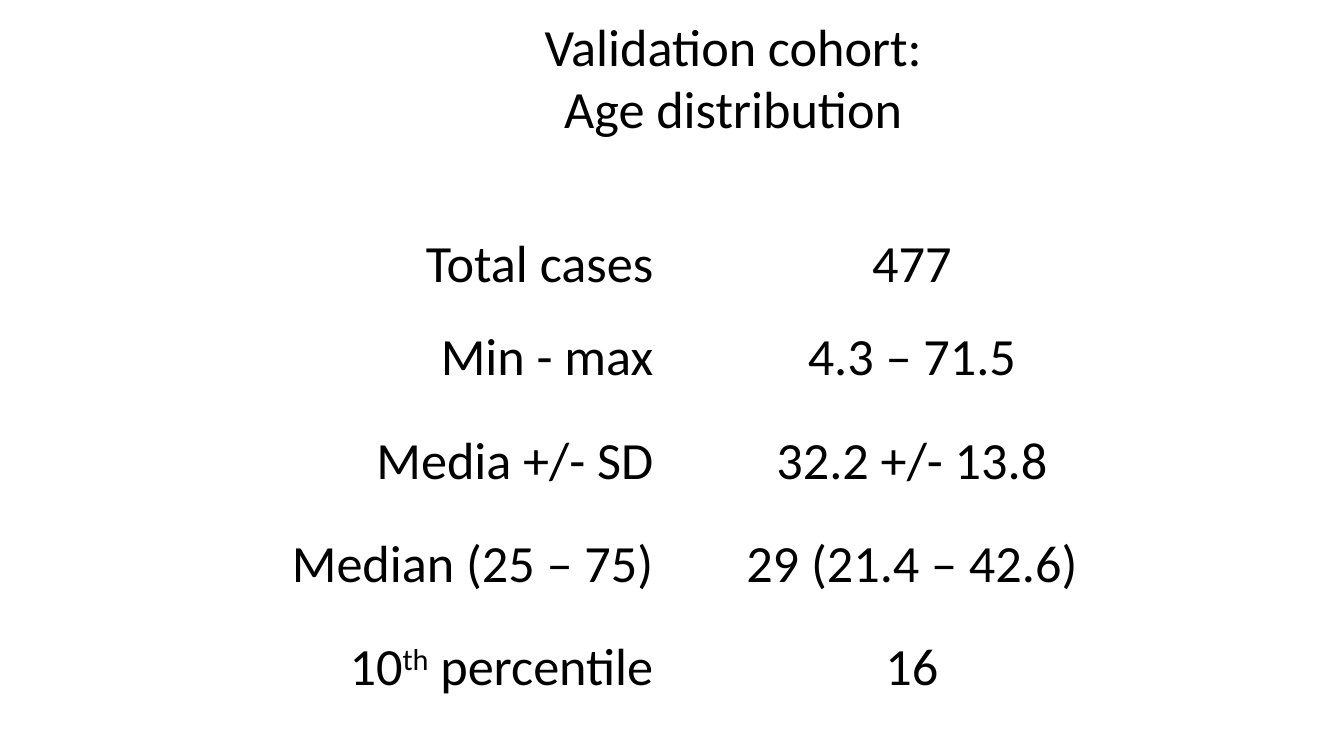
"""Build the age distribution slide of the validation cohort."""
import dataclasses

import pptx
import pptx.dml.color
import pptx.enum.text
import pptx.oxml.ns
import pptx.util

Inches = pptx.util.Inches
Align = pptx.enum.text.PP_ALIGN
Anchor = pptx.enum.text.MSO_ANCHOR


@dataclasses.dataclass(frozen=True)
class Theme:
    face: str = "Calibri"
    size: int = 28
    small: int = 10
    ink: str = "000000"


THEME = Theme()
ROWS = [
    (("Total cases",), "477"),
    (("Min - max",), "4.3 – 71.5"),
    (("Media +/- SD",), "32.2 +/- 13.8"),
    (("Median (25 – 75)",), "29 (21.4 – 42.6)"),
    (("10", "th", " percentile"), "16"),
]
GAPS = [0.2, 0.28, 0.28, 0.28]
COLS = [3.44, 3.83]
LINE = 0.49


def style(para, align):
    para.alignment = align
    font = para.font
    font.name = THEME.face
    font.size = pptx.util.Pt(THEME.size)
    font.bold = False
    font.color.rgb = pptx.dml.color.RGBColor.from_string(THEME.ink)


def add_title(slide, text):
    title = slide.shapes.title
    title.left, title.top = Inches(2.71), Inches(0.04)
    title.width, title.height = Inches(5.49), Inches(1.06)
    frame = title.text_frame
    frame.vertical_anchor = Anchor.MIDDLE
    frame.auto_size = pptx.enum.text.MSO_AUTO_SIZE.NONE
    frame.text = text
    style(frame.paragraphs[0], Align.CENTER)


def fill_cell(cell, parts, align):
    para = cell.text_frame.paragraphs[0]
    for rank, part in enumerate(parts):
        run = para.add_run()
        run.text = part
        if rank == 1:
            run.font._element.set("baseline", "30000")
    style(para, align)


def clear_cell(cell):
    cell.fill.background()
    cell.vertical_anchor = Anchor.BOTTOM
    cell.margin_left = cell.margin_right = cell.margin_top = Inches(0.01)
    cell.margin_bottom = 0


def shrink(cell):
    para = cell.text_frame.paragraphs[0]._p
    end = para.makeelement(pptx.oxml.ns.qn("a:endParaRPr"), {"sz": str(THEME.small * 100)})
    para.append(end)


def add_grid(slide):
    high = [LINE]
    for gap in GAPS:
        high += [gap, LINE]
    shape = slide.shapes.add_table(
        len(high), len(COLS), Inches(1.43), Inches(1.72),
        Inches(sum(COLS)), Inches(sum(high)))
    table = shape.table
    table.first_row = table.horz_banding = False
    for col, wide in zip(table.columns, COLS):
        col.width = Inches(wide)
    for row, tall in zip(table.rows, high):
        row.height = Inches(tall)
    for cell in table.iter_cells():
        clear_cell(cell)
    for rank, (label, value) in enumerate(ROWS):
        fill_cell(table.cell(2 * rank, 0), label, Align.RIGHT)
        fill_cell(table.cell(2 * rank, 1), (value,), Align.CENTER)
    for rank in range(len(GAPS)):
        for col in range(len(COLS)):
            shrink(table.cell(2 * rank + 1, col))


def main():
    deck = pptx.Presentation()
    deck.slide_width = Inches(10)
    deck.slide_height = deck.slide_width * 9 // 16
    slide = deck.slides.add_slide(deck.slide_layouts[5])
    add_title(slide, "Validation cohort:\vAge distribution")
    add_grid(slide)
    deck.save("out.pptx")


if __name__ == "__main__":
    main()
